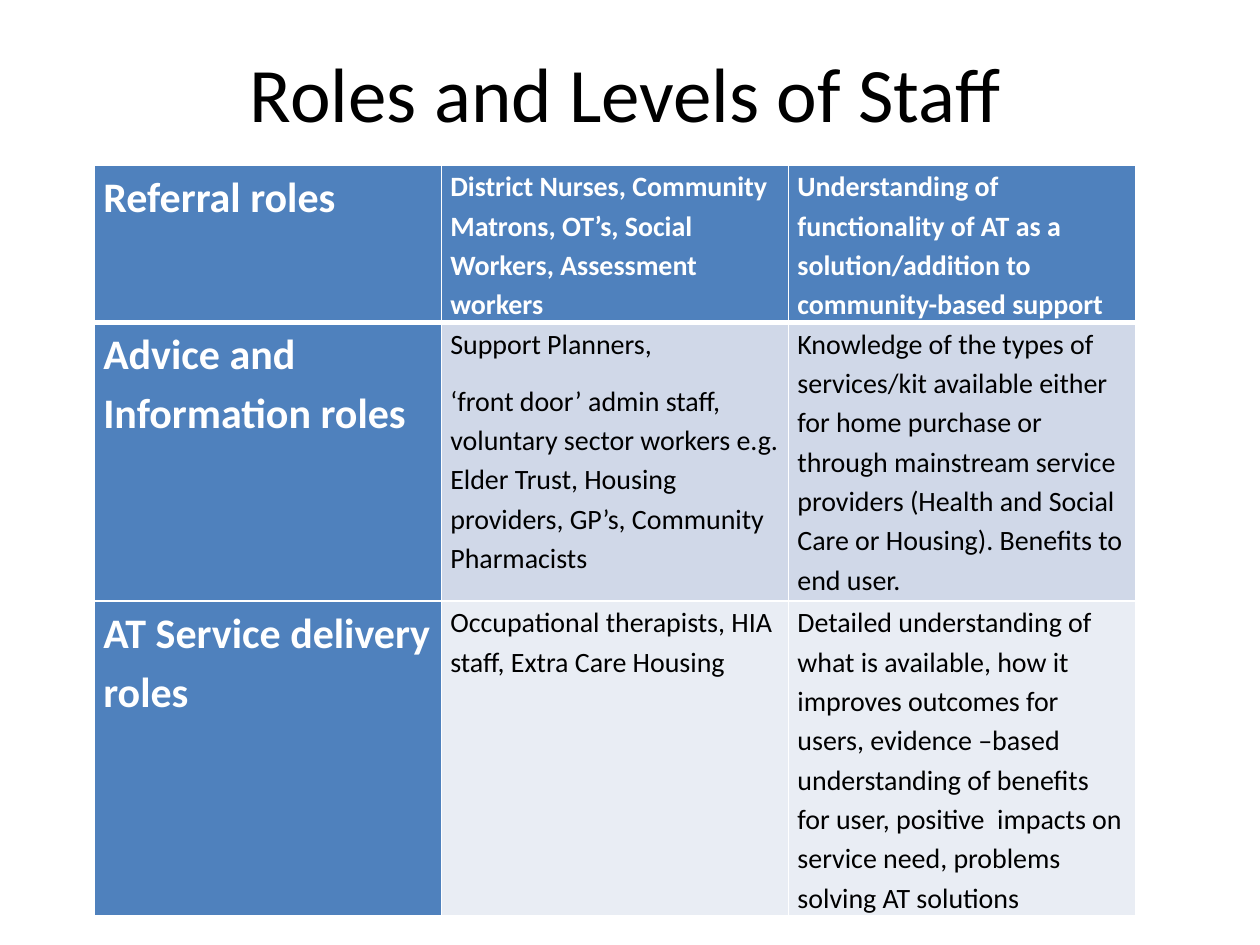
from dataclasses import dataclass

from lxml import etree
from pptx import Presentation
from pptx.dml.color import RGBColor
from pptx.enum.text import MSO_ANCHOR, PP_ALIGN
from pptx.oxml.ns import qn
from pptx.util import Inches, Pt

CENTER = PP_ALIGN.CENTER
MIDDLE, TOP = MSO_ANCHOR.MIDDLE, MSO_ANCHOR.TOP
TITLE_ONLY = 5


@dataclass(frozen=True)
class Theme:
    font: str = "Calibri"
    dark: str = "000000"
    light: str = "FFFFFF"
    accent: str = "4F81BD"
    bands: tuple = ("D0D8E8", "E9EDF4")
    title_size: int = 44
    role_size: int = 24
    body_size: int = 16


THEME = Theme()

ROW_HEIGHTS = [0.98, 2.21, 2.32]
COLUMN_WIDTH = 2.755
ROWS = [
    ("Referral roles",
     "District Nurses, Community Matrons, OT’s, Social Workers, Assessment workers",
     "Understanding of functionality of AT as a solution/addition to "
     "community-based support"),
    ("Advice and Information roles",
     "Support Planners,\n‘front door’ admin staff, voluntary sector workers e.g. "
     "Elder Trust, Housing providers, GP’s, Community Pharmacists",
     "Knowledge of the types of services/kit available either for home purchase or "
     "through mainstream service providers (Health and Social Care or Housing). "
     "Benefits to end user."),
    ("AT Service delivery roles",
     "Occupational therapists, HIA staff, Extra Care Housing",
     "Detailed understanding of what is available, how it improves outcomes for "
     "users, evidence –based understanding of benefits for user, positive  impacts "
     "on service need, problems solving AT solutions"),
]


def set_font(paragraph, size, color, bold=False):
    font = paragraph.font
    font.name = THEME.font
    font.size = Pt(size)
    font.bold = bold
    font.color.rgb = RGBColor.from_string(color)


def set_borders(cell, widths):
    """Draw light cell borders; widths maps side tags to points."""
    properties = cell._tc.get_or_add_tcPr()
    for index, (side, width) in enumerate(widths.items()):
        line = etree.Element(qn(f"a:{side}"), w=str(Pt(width)))
        fill = etree.SubElement(line, qn("a:solidFill"))
        etree.SubElement(fill, qn("a:srgbClr"), val=THEME.light)
        properties.insert(index, line)


deck = Presentation()
deck.slide_width, deck.slide_height = Inches(10), Inches(7.5)
page = deck.slides.add_slide(deck.slide_layouts[TITLE_ONLY])

title = page.shapes.title
title.left, title.top = Inches(0.51), Inches(0.21)
title.width, title.height = Inches(8.91), Inches(1.03)
title.text_frame.text = "Roles and Levels of Staff"
title.text_frame.vertical_anchor = MIDDLE
heading = title.text_frame.paragraphs[0]
heading.alignment = CENTER
set_font(heading, THEME.title_size, THEME.dark)

table = page.shapes.add_table(
    len(ROWS), len(ROWS[0]), Inches(0.75), Inches(1.31),
    Inches(COLUMN_WIDTH * len(ROWS[0])), Inches(sum(ROW_HEIGHTS))).table
for column in table.columns:
    column.width = Inches(COLUMN_WIDTH)

for row_index, (texts, height) in enumerate(zip(ROWS, ROW_HEIGHTS)):
    table.rows[row_index].height = Inches(height)
    for column_index, text in enumerate(texts):
        cell = table.cell(row_index, column_index)
        is_role = column_index == 0
        is_header = row_index == 0 or is_role
        cell.text = text
        cell.vertical_anchor = TOP
        cell.margin_left = cell.margin_right = Inches(0.07)
        cell.margin_top = cell.margin_bottom = 0
        cell.fill.solid()
        cell.fill.fore_color.rgb = RGBColor.from_string(
            THEME.accent if is_header else THEME.bands[row_index - 1])
        set_borders(cell, {"lnL": 1, "lnR": 1,
                           "lnT": 3 if row_index == 1 else 1,
                           "lnB": 3 if row_index == 0 else 1})
        for paragraph in cell.text_frame.paragraphs:
            paragraph.line_spacing = 1.15
            paragraph.space_after = Pt(10)
            set_font(paragraph,
                     THEME.role_size if is_role else THEME.body_size,
                     THEME.light if is_header else THEME.dark,
                     bold=is_header)

deck.save("out.pptx")
